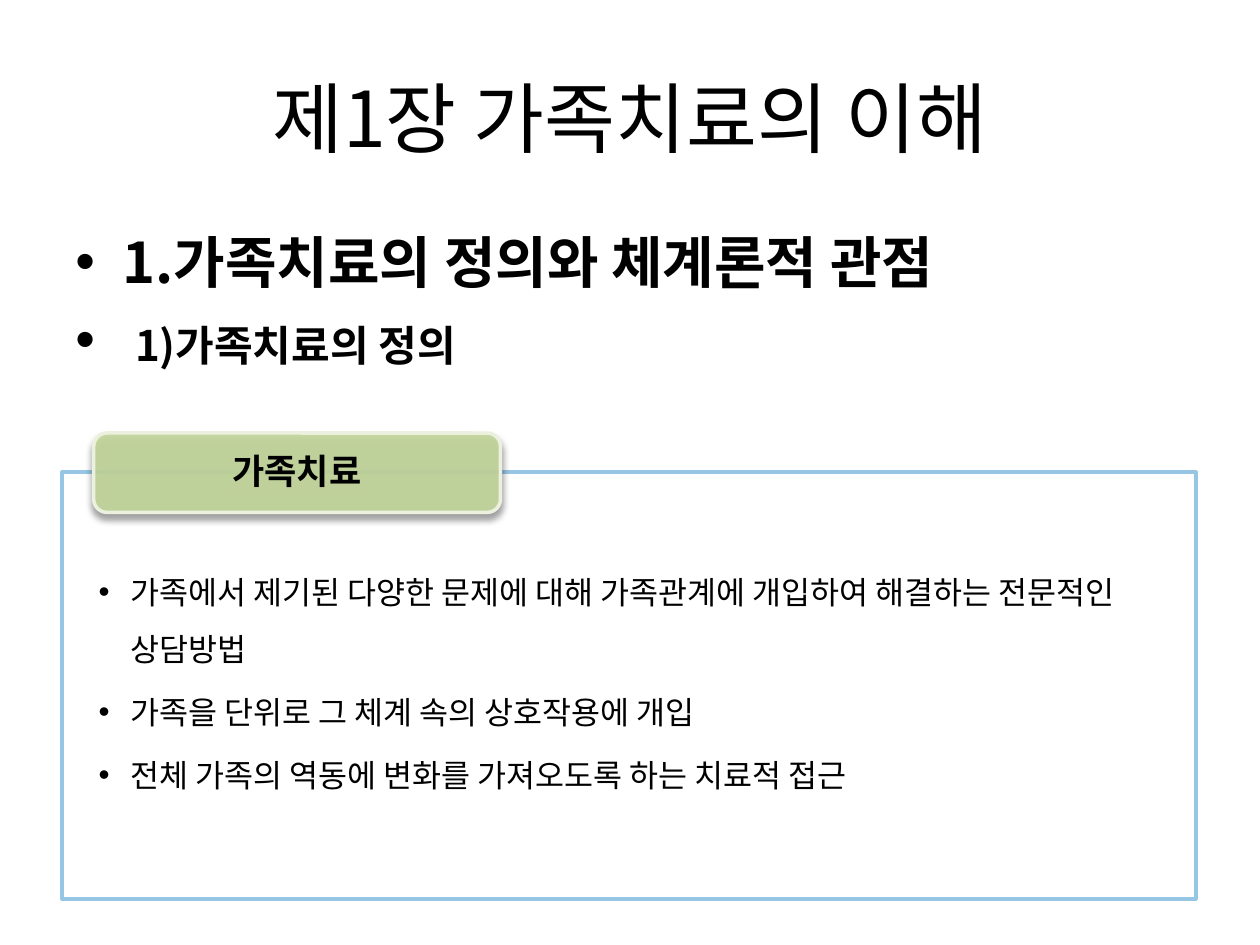
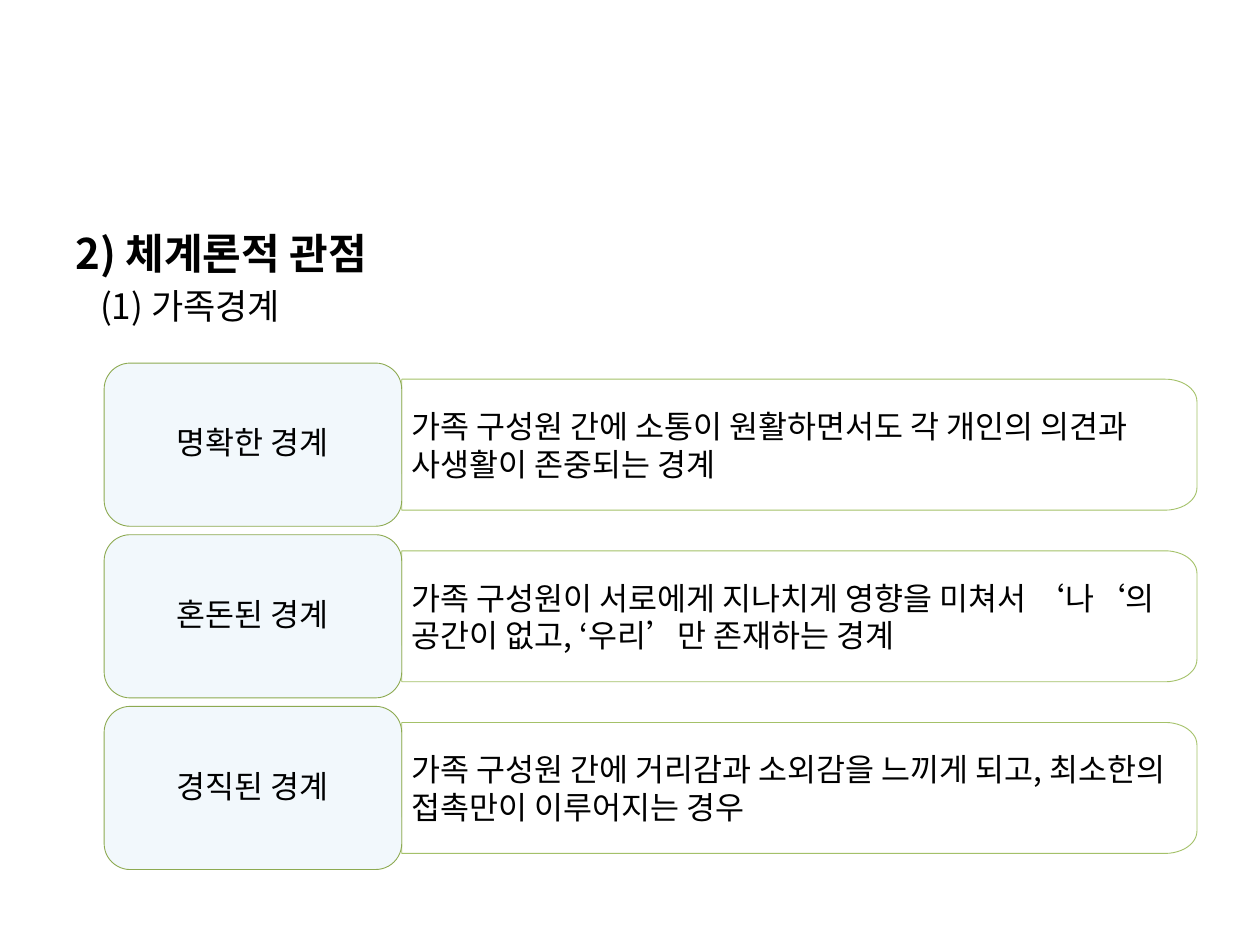
import math

from lxml import etree
from pptx import Presentation
from pptx.dml.color import RGBColor
from pptx.enum import shapes, text
from pptx.oxml import ns
from pptx.util import Cm, Pt

FONT = "Noto Sans CJK KR"
BLACK, WHITE = "000000", "FFFFFF"
FRAME_BLUE, LABEL_BLUE = "96C6E3", "F2F8FC"
TAG_GREEN, TAG_EDGE = "C3D69B", "EBF1DE"
LABEL_EDGE, NOTE_EDGE = "8DAA51", "9BBB59"
TITLE_BOX = (1.27, 0.76, 22.86, 3.18)
BODY_BOX = (1.27, 4.45, 22.86, 12.57)
DEFAULT_INSETS = (0.25, 0.13, 0.25, 0.13)
CENTER = text.PP_ALIGN.CENTER
MIDDLE = text.MSO_ANCHOR.MIDDLE


def color(value):
    """Turn a hex string into a colour."""
    return RGBColor.from_string(value)


def sub(parent, tag, **attrs):
    """Add a drawing element with attributes to a parent."""
    return etree.SubElement(parent, ns.qn(tag), attrs)


def paint(s, fill=None, line=None, width=1, alpha=None, line_alpha=None):
    """Set fill and line of a shape, with opacity in percent."""
    s.shadow.inherit = False
    s.line.color.rgb = color(line)
    s.line.width = Pt(width)
    if fill:
        s.fill.solid()
        s.fill.fore_color.rgb = color(fill)
    else:
        s.fill.background()
    for place, percent in (("a:solidFill", alpha), ("a:ln/a:solidFill", line_alpha)):
        if percent:
            clr = s.element.spPr.xpath(f"./{place}/a:srgbClr")[0]
            sub(clr, "a:alpha", val=str(percent * 1000))


def drop_shadow(s, blur, distance, percent):
    """Give a shape a soft shadow straight below it."""
    effects = s.element.spPr.find(ns.qn("a:effectLst"))
    shadow = sub(effects, "a:outerShdw", blurRad=str(Pt(blur)), dist=str(Pt(distance)),
                 dir="5400000", rotWithShape="0")
    clr = sub(shadow, "a:srgbClr", val=BLACK)
    sub(clr, "a:alpha", val=str(percent * 1000))


def prepare(s, anchor=text.MSO_ANCHOR.TOP, insets=DEFAULT_INSETS):
    """Set wrapping, anchor and insets of a shape and return its text frame."""
    tf = s.text_frame
    tf.word_wrap = True
    tf.vertical_anchor = anchor
    tf.margin_left, tf.margin_top, tf.margin_right, tf.margin_bottom = map(Cm, insets)
    return tf


def write(tf, words, size, bold=False, align=text.PP_ALIGN.LEFT, before=0, after=0,
          spacing=1.0, indent=0, bullet=False):
    """Write one paragraph, using the empty first one when there is one."""
    p = tf.paragraphs[0]
    if p.runs:
        p = tf.add_paragraph()
    p.add_run().text = words
    p.alignment = align
    p.space_before, p.space_after = Pt(before), Pt(after)
    p.line_spacing = spacing
    p_pr = p._p.get_or_add_pPr()
    p_pr.set("marL", str(Cm(indent)))
    p_pr.set("indent", str(Cm(-indent if bullet else 0)))
    if bullet:
        sub(p_pr, "a:buFont", typeface="Arial")
        sub(p_pr, "a:buChar", char="•")
    style(p.font, size, bold)
    return p


def style(font, size, bold):
    """Set face, size, weight and colour of a font."""
    font.size, font.bold, font.name = Pt(size), bold, FONT
    font.color.rgb = color(BLACK)
    sub(font._element, "a:ea", typeface=FONT)


def textbox(slide, box):
    """Add a text box and return its text frame."""
    return prepare(slide.shapes.add_textbox(*map(Cm, box)))


def add_title(slide, words):
    """Add the centred slide title."""
    tf = textbox(slide, TITLE_BOX)
    tf.vertical_anchor = MIDDLE
    write(tf, words, 44, align=CENTER)


def definition_panel(slide, box, heading, points):
    """Draw a frame with a tag on its top edge and bullets inside."""
    x, y, w, h = box
    frame = slide.shapes.add_shape(shapes.MSO_SHAPE.RECTANGLE, *map(Cm, box))
    paint(frame, line=FRAME_BLUE, width=2)

    tag = slide.shapes.add_shape(shapes.MSO_SHAPE.ROUNDED_RECTANGLE,
                                 Cm(x + 0.64), Cm(y - 0.79), Cm(8.2), Cm(1.6))
    paint(tag, TAG_GREEN, TAG_EDGE, 2, alpha=90)
    drop_shadow(tag, 4, 3, 40)
    tf = prepare(tag, MIDDLE, (0.25,) * 4)
    write(tf, heading, 20, bold=True, align=CENTER, after=7, spacing=0.9)

    tf = prepare(slide.shapes.add_textbox(Cm(x), Cm(y + 1.57), Cm(w), Cm(5.13)),
                 insets=(0.74, 0.08, 0.41, 0.08))
    for point in points:
        write(tf, point, 18, after=3.6, spacing=1.5, indent=0.64, bullet=True)


def note_shape(slide, box, rx=0.64, ry=0.45, steps=12):
    """Draw a rectangle whose two right corners are rounded."""
    x, y, w, h = box
    angles = [math.pi / 2 * i / steps for i in range(steps + 1)]
    top = [(x + w - rx + rx * math.sin(a), y + ry - ry * math.cos(a)) for a in angles]
    bottom = [(px, 2 * y + h - py) for px, py in reversed(top)]
    outline = [(Cm(px), Cm(py)) for px, py in top + bottom + [(x, y + h)]]
    builder = slide.shapes.build_freeform(Cm(x), Cm(y))
    builder.add_line_segments(outline, close=True)
    return builder.convert_to_shape()


def boundary_row(slide, box, name, meaning):
    """Draw a label with the note that explains it on its right."""
    x, y, w, h = box
    label_w, note_h = 6, 2.64
    note = note_shape(slide, (x + label_w, y + (h - note_h) / 2, w - label_w, note_h))
    paint(note, WHITE, NOTE_EDGE, 0.5, alpha=90, line_alpha=90)
    write(prepare(note, MIDDLE, (0.2, 0.25, 0.36, 0.25)), meaning, 18, after=2.7)

    label = slide.shapes.add_shape(shapes.MSO_SHAPE.ROUNDED_RECTANGLE,
                                   Cm(x), Cm(y), Cm(label_w), Cm(h))
    label.adjustments[0] = 0.16
    paint(label, LABEL_BLUE, LABEL_EDGE, 0.5)
    tf = prepare(label, MIDDLE, (0.6, 0.4, 0.6, 0.4))
    write(tf, name, 18, align=CENTER, after=6.3, spacing=0.9)


def definition_slide(slide):
    """Build the slide that defines family therapy."""
    add_title(slide, "제1장 가족치료의 이해")
    tf = textbox(slide, BODY_BOX)
    write(tf, "1.가족치료의 정의와 체계론적 관점", 32, bold=True, before=6.4,
          indent=0.95, bullet=True)
    p = write(tf, " ", 32, before=6.4, indent=0.95, bullet=True)
    style(p.runs[0].font, 32, False)
    r = p.add_run()
    r.text = "1)가족치료의 정의"
    style(r.font, 24, True)
    definition_panel(slide, (1.25, 9.52, 22.86, 8.6), "가족치료", [
        "가족에서 제기된 다양한 문제에 대해 가족관계에 개입하여 해결하는 전문적인 상담방법",
        "가족을 단위로 그 체계 속의 상호작용에 개입",
        "전체 가족의 역동에 변화를 가져오도록 하는 치료적 접근",
    ])


def boundaries_slide(slide):
    """Build the slide on the three kinds of family boundary."""
    tf = textbox(slide, BODY_BOX)
    write(tf, "2) 체계론적 관점", 24, bold=True, before=4.8)
    write(tf, "(1) 가족경계", 20, before=4, indent=0.5)
    boundaries = [
        ("명확한 경계", "가족 구성원 간에 소통이 원활하면서도 각 개인의 의견과 사생활이 존중되는 경계"),
        ("혼돈된 경계", "가족 구성원이 서로에게 지나치게 영향을 미쳐서 ‘나‘의 공간이 없고, ‘우리’만 존재하는 경계"),
        ("경직된 경계", "가족 구성원 간에 거리감과 소외감을 느끼게 되고, 최소한의 접촉만이 이루어지는 경우"),
    ]
    row_h, gap = 3.29, 0.17
    for i, (name, meaning) in enumerate(boundaries):
        boundary_row(slide, (2.1, 7.32 + i * (row_h + gap), 22.03, row_h), name, meaning)


def main():
    """Build and save the presentation."""
    prs = Presentation()
    prs.slide_width, prs.slide_height = Cm(25.4), Cm(19.05)
    for build in (definition_slide, boundaries_slide):
        build(prs.slides.add_slide(prs.slide_layouts[6]))
    prs.save("out.pptx")


if __name__ == "__main__":
    main()
